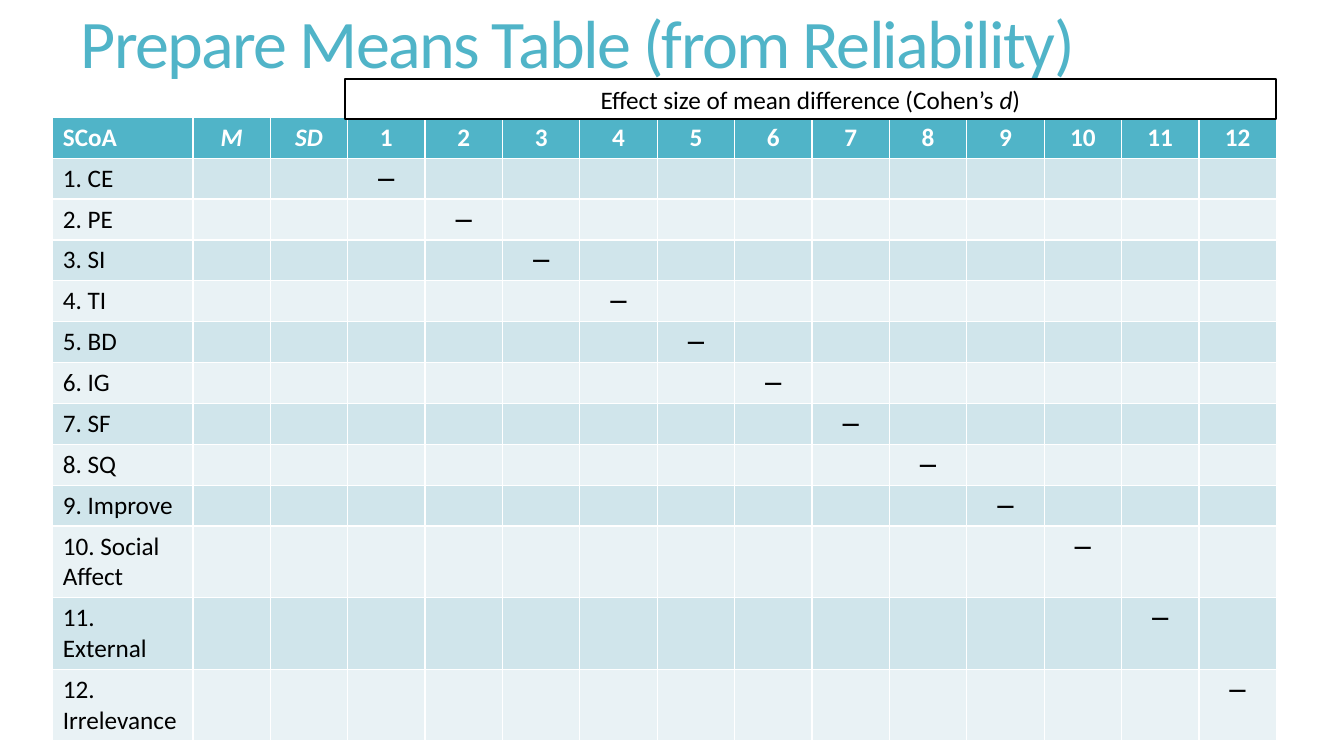
import pptx
import pptx.dml.color
import pptx.enum.text
import pptx.util

Pt = pptx.util.Pt
ALIGN = pptx.enum.text.PP_ALIGN
MIDDLE = pptx.enum.text.MSO_ANCHOR.MIDDLE
COLORS = {
    "accent": "50B4C8",
    "odd row": "D0E5EB",
    "even row": "E9F2F5",
    "white": "FFFFFF",
    "black": "000000",
}
SCALES = ["CE", "PE", "SI", "TI", "BD", "IG", "SF", "SQ", "Improve",
          "Social Affect", "External", "Irrelevance"]
HEADERS = ["SCoA", "M", "SD"] + [str(n + 1) for n in range(len(SCALES))]
FIRST_WIDTH, COLUMN_WIDTH, ROW_HEIGHT = 100.1, 55.28, 29.2


def color(name):
    return pptx.dml.color.RGBColor.from_string(COLORS[name])


def style(paragraph, size, color_name, bold=False, align=ALIGN.LEFT):
    paragraph.alignment = align
    paragraph.font.name = "Calibri"
    paragraph.font.size = Pt(size)
    paragraph.font.bold = bold
    paragraph.font.color.rgb = color(color_name)


presentation = pptx.Presentation()
presentation.slide_width, presentation.slide_height = Pt(960), Pt(540)
slide = presentation.slides.add_slide(presentation.slide_layouts[5])

# Title
title = slide.shapes.title
title.left, title.top, title.width, title.height = Pt(50.4), Pt(5.8), Pt(848), Pt(56.9)
title.text_frame.vertical_anchor = MIDDLE
title.text_frame.auto_size = pptx.enum.text.MSO_AUTO_SIZE.NONE
paragraph = title.text_frame.paragraphs[0]
run = paragraph.add_run()
run.text = "Prepare Means Table (from Reliability)"
run._r.get_or_add_rPr().set("spc", "-120")
style(paragraph, 48.6, "accent")
paragraph.line_spacing = 0.85

# Means table: the default style draws the white cell borders
table = slide.shapes.add_table(
    len(SCALES) + 1, len(HEADERS), Pt(37.7), Pt(83.8),
    Pt(FIRST_WIDTH + COLUMN_WIDTH * (len(HEADERS) - 1)),
    Pt(ROW_HEIGHT * (len(SCALES) + 1))).table
for index, column in enumerate(table.columns):
    column.width = Pt(COLUMN_WIDTH if index else FIRST_WIDTH)
for row in table.rows:
    row.height = Pt(ROW_HEIGHT)

for row_index in range(len(SCALES) + 1):
    for column_index, header in enumerate(HEADERS):
        cell = table.cell(row_index, column_index)
        is_header = row_index == 0
        is_diagonal = not is_header and column_index == row_index + 2
        if is_header:
            cell.text, fill = header, "accent"
        else:
            fill = "odd row" if row_index % 2 else "even row"
            if column_index == 0:
                cell.text = f"{row_index}. {SCALES[row_index - 1]}"
            elif is_diagonal:
                cell.text = "―"
        cell.fill.solid()
        cell.fill.fore_color.rgb = color(fill)
        paragraph = cell.text_frame.paragraphs[0]
        style(paragraph, 18, "white" if is_header else "black",
              bold=is_header or is_diagonal,
              align=ALIGN.CENTER if column_index else ALIGN.LEFT)
        paragraph.font.italic = is_header and header in ("M", "SD")

# Effect size heading above the numbered columns
heading = slide.shapes.add_shape(
    pptx.enum.shapes.MSO_SHAPE.RECTANGLE, Pt(246.2), Pt(56.2), Pt(665.3), Pt(29.1))
heading.shadow.inherit = False
heading.fill.background()
heading.line.color.rgb = color("black")
heading.line.width = Pt(1.5)
heading.text_frame.word_wrap = True
heading.text_frame.vertical_anchor = MIDDLE
paragraph = heading.text_frame.paragraphs[0]
style(paragraph, 18, "black", align=ALIGN.CENTER)
for text, italic in [("Effect size of mean difference (Cohen’s ", False),
                     ("d", True), (")", False)]:
    run = paragraph.add_run()
    run.text = text
    run.font.italic = italic

presentation.save("out.pptx")
